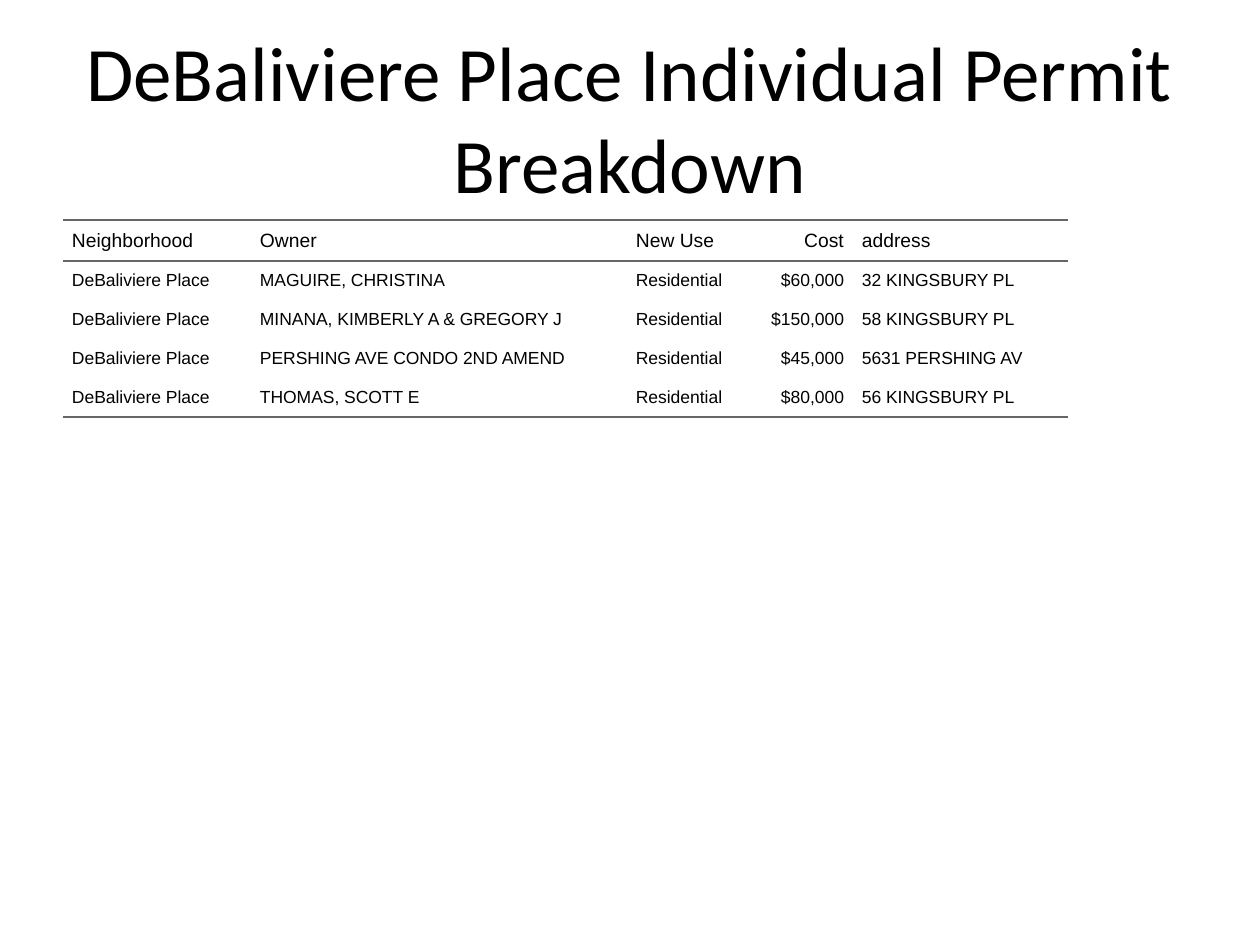
from lxml.etree import SubElement
from pptx import Presentation
from pptx.dml.color import RGBColor
from pptx.enum.text import MSO_ANCHOR, PP_ALIGN
from pptx.oxml.ns import qn
from pptx.util import Emu, Pt

PX = 914400 // 126
NO_STYLE_NO_GRID = "{2D5ABB26-0587-4C30-8999-92F81FD0307C}"
BLACK, RULE_GRAY = "000000", "666666"


def format_text(paragraph, font_name, size, color, alignment):
    paragraph.alignment = alignment
    for run in paragraph.runs:
        run.font.name = font_name
        run.font.size = Pt(size)
        run.font.color.rgb = RGBColor.from_string(color)


def add_border(cell, side, color):
    """Draw a 1.5 pt rule on one side of a cell: lnT (top) or lnB (bottom)."""
    line = SubElement(cell._tc.get_or_add_tcPr(), qn(f"a:{side}"), w=str(Pt(1.5)))
    fill = SubElement(line, qn("a:solidFill"))
    SubElement(fill, qn("a:srgbClr"), val=color)


presentation = Presentation()
presentation.slide_width = Emu(1260 * PX)
presentation.slide_height = Emu(945 * PX)
slide = presentation.slides.add_slide(presentation.slide_layouts[6])

# Title
title = slide.shapes.add_textbox(63 * PX, 38 * PX, 1134 * PX, 157 * PX)
title.text_frame.word_wrap = True
title.text_frame.vertical_anchor = MSO_ANCHOR.MIDDLE
title.text_frame.text = "DeBaliviere Place Individual Permit Breakdown"
format_text(title.text_frame.paragraphs[0], "Calibri", 44, BLACK, PP_ALIGN.CENTER)

# Permit table
headers = ["Neighborhood", "Owner", "New Use", "Cost", "address"]
permits = [
    ("MAGUIRE, CHRISTINA", "$60,000", "32 KINGSBURY PL"),
    ("MINANA, KIMBERLY A & GREGORY J", "$150,000", "58 KINGSBURY PL"),
    ("PERSHING AVE CONDO 2ND AMEND", "$45,000", "5631 PERSHING AV"),
    ("THOMAS, SCOTT E", "$80,000", "56 KINGSBURY PL"),
]
rows = [headers] + [
    ["DeBaliviere Place", owner, "Residential", cost, address]
    for owner, cost, address in permits
]
column_widths = [188, 376, 131, 95, 215]
row_height = 32
cell_margin = 9

frame = slide.shapes.add_table(
    len(rows), len(headers), 63 * PX, 220 * PX,
    sum(column_widths) * PX, len(rows) * row_height * PX,
)
table = frame.table
table.first_row = False
table.horz_banding = False
table._tbl.tblPr.find(qn("a:tableStyleId")).text = NO_STYLE_NO_GRID
for column, width in zip(table.columns, column_widths):
    column.width = Emu(width * PX)

for row_index, values in enumerate(rows):
    is_header = row_index == 0
    is_last = row_index == len(rows) - 1
    for column_index, value in enumerate(values):
        cell = table.cell(row_index, column_index)
        cell.margin_left = cell.margin_right = cell_margin * PX
        cell.margin_top = cell.margin_bottom = cell_margin * PX
        cell.vertical_anchor = MSO_ANCHOR.MIDDLE
        if is_header:
            add_border(cell, "lnT", RULE_GRAY)
        if is_header or is_last:
            add_border(cell, "lnB", RULE_GRAY)
        cell.fill.background()
        cell.text_frame.text = value
        alignment = PP_ALIGN.RIGHT if headers[column_index] == "Cost" else PP_ALIGN.LEFT
        format_text(cell.text_frame.paragraphs[0], "Arial",
                    11 if is_header else 10, BLACK, alignment)

presentation.save("out.pptx")
